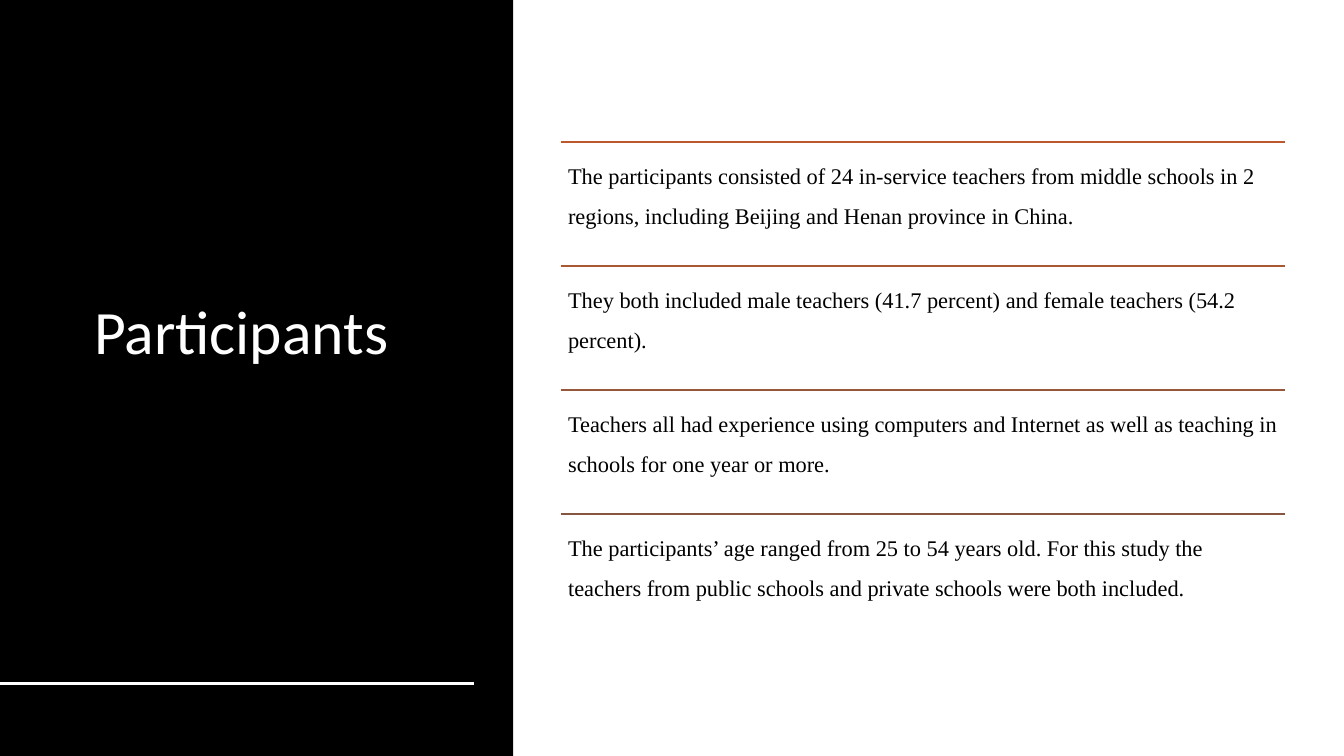
from dataclasses import dataclass

from lxml.etree import SubElement
from pptx import Presentation
from pptx.dml.color import RGBColor
from pptx.enum.shapes import MSO_CONNECTOR, MSO_SHAPE
from pptx.enum.text import MSO_ANCHOR, MSO_AUTO_SIZE, PP_ALIGN
from pptx.oxml.ns import qn
from pptx.util import Pt


@dataclass(frozen=True)
class Theme:
    """Colours, fonts and type sizes of the slide."""
    panel: str = "000000"
    title: str = "FFFFFF"
    body: str = "000000"
    rules: tuple = ("BD582C", "AA5834", "97573A", "865640")
    title_font: str = "Calibri"
    body_font: str = "Times New Roman"
    title_size: int = 44
    body_size: int = 16


THEME = Theme()
LIST_LEFT, LIST_TOP, LIST_WIDTH, ROW_HEIGHT = 401, 101.5, 517, 88.55
FACTS = (
    "The participants consisted of 24 in-service teachers from middle schools in 2 "
    "regions, including Beijing and Henan province in China.",
    "They both included male teachers (41.7 percent) and female teachers (54.2 percent).",
    "Teachers all had experience using computers and Internet as well as teaching in "
    "schools for one year or more.",
    "The participants’ age ranged from 25 to 54 years old. For this study the teachers "
    "from public schools and private schools were both included.",
)


def write_text(sp, text, *, font, size, color, spacing, anchor, inset=None):
    """Put one formatted paragraph into a shape."""
    tf = sp.text_frame
    tf.word_wrap = True
    tf.auto_size = MSO_AUTO_SIZE.NONE
    tf.vertical_anchor = anchor
    if inset is not None:
        tf.margin_left = tf.margin_top = tf.margin_right = tf.margin_bottom = Pt(inset)
    p = tf.paragraphs[0]
    p.alignment = PP_ALIGN.LEFT
    p.line_spacing = spacing
    r = p.add_run()
    r.text = text
    r.font.name = font
    r.font.size = Pt(size)
    r.font.color.rgb = RGBColor.from_string(color)


def add_rule(slide, left, top, width, color, weight):
    """Draw a horizontal line."""
    line = slide.shapes.add_connector(
        MSO_CONNECTOR.STRAIGHT, Pt(left), Pt(top), Pt(left + width), Pt(top))
    line.line.color.rgb = RGBColor.from_string(color)
    line.line.width = Pt(weight)
    SubElement(line._element.spPr, qn("a:effectLst"))


def add_panel(slide, width, height):
    """Fill the left side of the slide."""
    sp = slide.shapes.add_shape(MSO_SHAPE.RECTANGLE, 0, 0, Pt(width), Pt(height))
    sp.shadow.inherit = False
    sp.fill.solid()
    sp.fill.fore_color.rgb = RGBColor.from_string(THEME.panel)
    sp.line.fill.background()


def place_title(slide, text):
    """Move the title placeholder onto the panel and fill it."""
    sp = slide.shapes.title
    slide.shapes._spTree.append(sp._element)
    sp.left, sp.top, sp.width, sp.height = Pt(60), Pt(44), Pt(281), Pt(390)
    write_text(sp, text, font=THEME.title_font, size=THEME.title_size,
               color=THEME.title, spacing=0.9, anchor=MSO_ANCHOR.MIDDLE)


def add_fact(slide, top, text, color):
    """Add one ruled row of the list."""
    add_rule(slide, LIST_LEFT, top, LIST_WIDTH, color, 1)
    sp = slide.shapes.add_textbox(Pt(LIST_LEFT), Pt(top), Pt(LIST_WIDTH), Pt(ROW_HEIGHT))
    write_text(sp, text, font=THEME.body_font, size=THEME.body_size,
               color=THEME.body, spacing=1.5, anchor=MSO_ANCHOR.TOP, inset=4.8)


def main():
    """Build and save the slide."""
    prs = Presentation()
    prs.slide_width, prs.slide_height = Pt(960), Pt(540)
    slide = prs.slides.add_slide(prs.slide_layouts.get_by_name("Title Only"))
    add_panel(slide, 366.5, 540)
    place_title(slide, "Participants")
    add_rule(slide, 0, 488, 338.5, THEME.title, 2)
    for i, (text, color) in enumerate(zip(FACTS, THEME.rules)):
        add_fact(slide, LIST_TOP + i * ROW_HEIGHT, text, color)
    prs.save("out.pptx")


if __name__ == "__main__":
    main()
